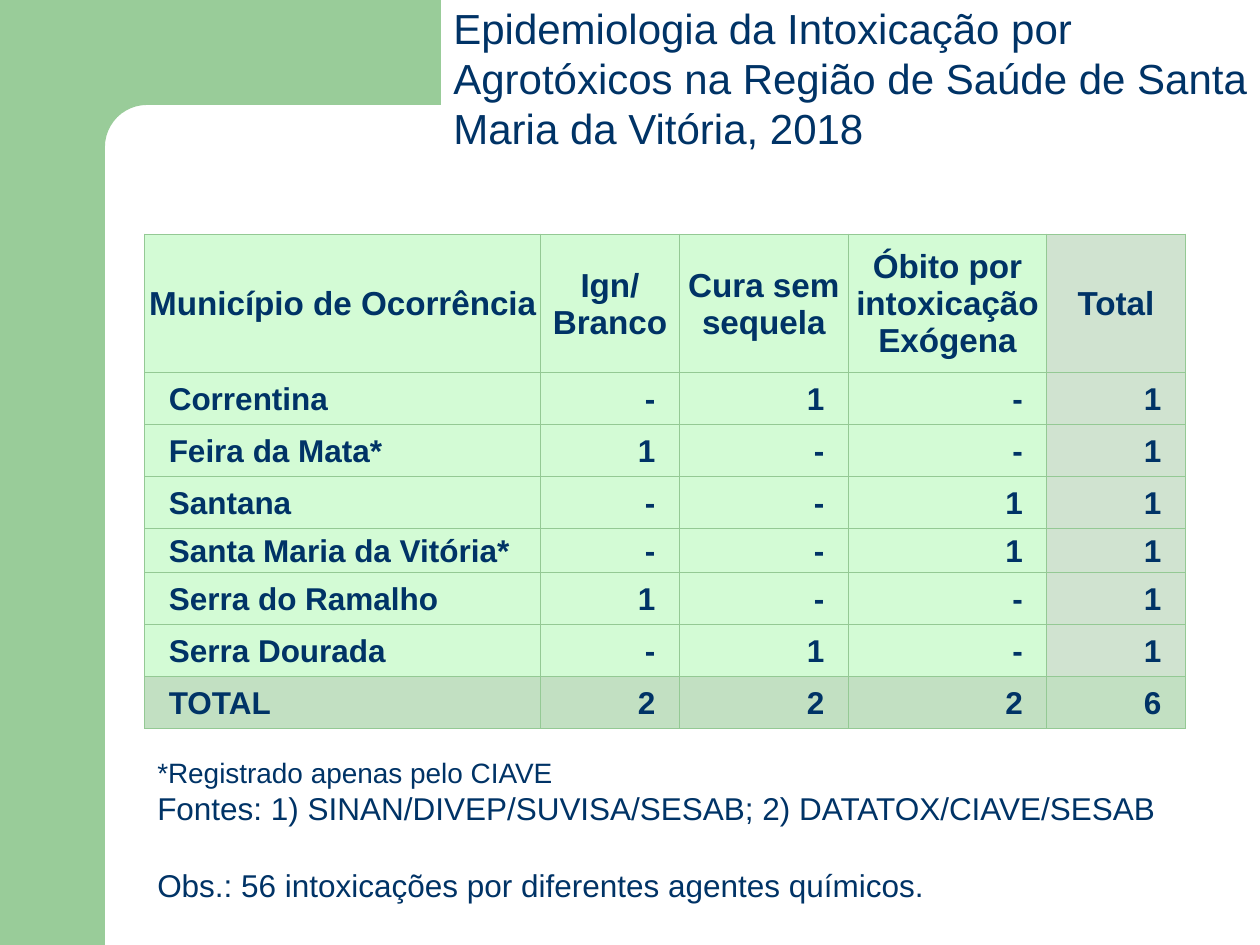
from math import cos, pi, sin

from lxml import etree
from pptx import Presentation
from pptx.dml.color import RGBColor
from pptx.enum.shapes import MSO_SHAPE
from pptx.enum.text import MSO_ANCHOR, MSO_AUTO_SIZE, PP_ALIGN
from pptx.oxml.ns import qn
from pptx.util import Inches, Pt

RECTANGLE = MSO_SHAPE.RECTANGLE
MIDDLE = MSO_ANCHOR.MIDDLE
GROW = MSO_AUTO_SIZE.SHAPE_TO_FIT_TEXT
LEFT, CENTER, RIGHT = PP_ALIGN.LEFT, PP_ALIGN.CENTER, PP_ALIGN.RIGHT

# The slide is a grid of 120 columns by 90 rows of square units.
COLUMNS, ROWS = 120, 90
UNIT = Inches(10) / COLUMNS
NAVY, GREEN, BORDER = "003366", "99CC99", "94C994"
BODY_FILL, TOTAL_COLUMN_FILL, TOTAL_ROW_FILL = "D3FBD5", "D0E3D0", "C2E0C2"


def grid(*units):
    return [round(u * UNIT) for u in units]


def write(paragraph, text, size, bold=False):
    run = paragraph.add_run()
    run.text = text
    for attribute, value in {"name": "Arial", "size": Pt(size), "bold": bold}.items():
        setattr(run.font, attribute, value)
    run.font.color.rgb = RGBColor.from_string(NAVY)


prs = Presentation()
prs.slide_width, prs.slide_height = grid(COLUMNS, ROWS)
slide = prs.slides.add_slide(prs.slide_layouts[6])

# Green side band and the rounded inner corner that joins it to the top band
side_band = slide.shapes.add_shape(RECTANGLE, *grid(0, 0, 10, ROWS))
arc = [(14 - 4 * cos(step * pi / 24), 14 - 4 * sin(step * pi / 24)) for step in range(13)]
outline = [(42, 0), (42, 10), *reversed(arc), (10, 15.4), (6, 15.4), (6, 0)]
builder = slide.shapes.build_freeform(*grid(*outline[0]))
builder.add_line_segments([grid(*point) for point in outline[1:]], close=True)
for band in (side_band, builder.convert_to_shape()):
    band.shadow.inherit = False
    band.fill.solid()
    band.fill.fore_color.rgb = RGBColor.from_string(GREEN)
    band.line.fill.background()

# Title and footnotes: place, then (text, size, space before) per paragraph
title = [("Epidemiologia da Intoxicação por Agrotóxicos na Região de Saúde de "
          "Santa Maria da Vitória, 2018", 24, 0)]
footnotes = [
    ("*Registrado apenas pelo CIAVE", 16, 0),
    ("Fontes: 1) SINAN/DIVEP/SUVISA/SESAB; 2) DATATOX/CIAVE/SESAB", 18, 0),
    ("Obs.: 56 intoxicações por diferentes agentes químicos.", 18, 22),
]
for place, lines in (((42, -0.4, 78, 15.7), title), ((13.8, 71.4, 99.1, 15.4), footnotes)):
    frame = slide.shapes.add_textbox(*grid(*place)).text_frame
    frame.word_wrap = True
    frame.auto_size = GROW
    for index, (text, size, gap) in enumerate(lines):
        paragraph = frame.add_paragraph() if index else frame.paragraphs[0]
        paragraph.space_before = Pt(gap)
        write(paragraph, text, size)

# Cases by municipality and outcome
cases = [
    ["Município de Ocorrência", "Ign/ Branco", "Cura sem sequela",
     "Óbito por intoxicação Exógena", "Total"],
    ["Correntina", "-", "1", "-", "1"],
    ["Feira da Mata*", "1", "-", "-", "1"],
    ["Santana", "-", "-", "1", "1"],
    ["Santa Maria da Vitória*", "-", "-", "1", "1"],
    ["Serra do Ramalho", "1", "-", "-", "1"],
    ["Serra Dourada", "-", "1", "-", "1"],
    ["TOTAL", "2", "2", "2", "6"],
]
widths = [37.7, 13.2, 16.1, 18.9, 13.2]
heights = [13.2, 4.95, 4.95, 4.95, 4.2, 4.95, 4.95, 4.95]
last_row, last_column = len(cases) - 1, len(widths) - 1
table = slide.shapes.add_table(len(cases), len(widths),
                               *grid(13.8, 22.3, sum(widths), sum(heights))).table
for column, width in zip(table.columns, grid(*widths)):
    column.width = width
for row, height in zip(table.rows, grid(*heights)):
    row.height = height

for r, record in enumerate(cases):
    for c, text in enumerate(record):
        cell = table.cell(r, c)
        header = r == 0
        wide_left = not header and c == 0
        wide_right = not header and c > 0
        cell_format = {
            "vertical_anchor": MIDDLE,
            "margin_left": Inches(0.19 if wide_left else 0.01),
            "margin_right": Inches(0.19 if wide_right else 0.01),
            "margin_top": Inches(0.01),
            "margin_bottom": 0,
        }
        for attribute, value in cell_format.items():
            setattr(cell, attribute, value)

        paragraph = cell.text_frame.paragraphs[0]
        paragraph.alignment = CENTER if header else LEFT if c == 0 else RIGHT
        write(paragraph, text, 19 if header else 18, bold=True)

        properties = cell._tc.get_or_add_tcPr()
        for side in ("a:lnL", "a:lnR", "a:lnT", "a:lnB"):
            edge = etree.SubElement(properties, qn(side), w=str(Pt(0.75)))
            paint = etree.SubElement(edge, qn("a:solidFill"))
            etree.SubElement(paint, qn("a:srgbClr"), val=BORDER)

        fill = (TOTAL_ROW_FILL if r == last_row
                else TOTAL_COLUMN_FILL if c == last_column else BODY_FILL)
        cell.fill.solid()
        cell.fill.fore_color.rgb = RGBColor.from_string(fill)

prs.save("out.pptx")
